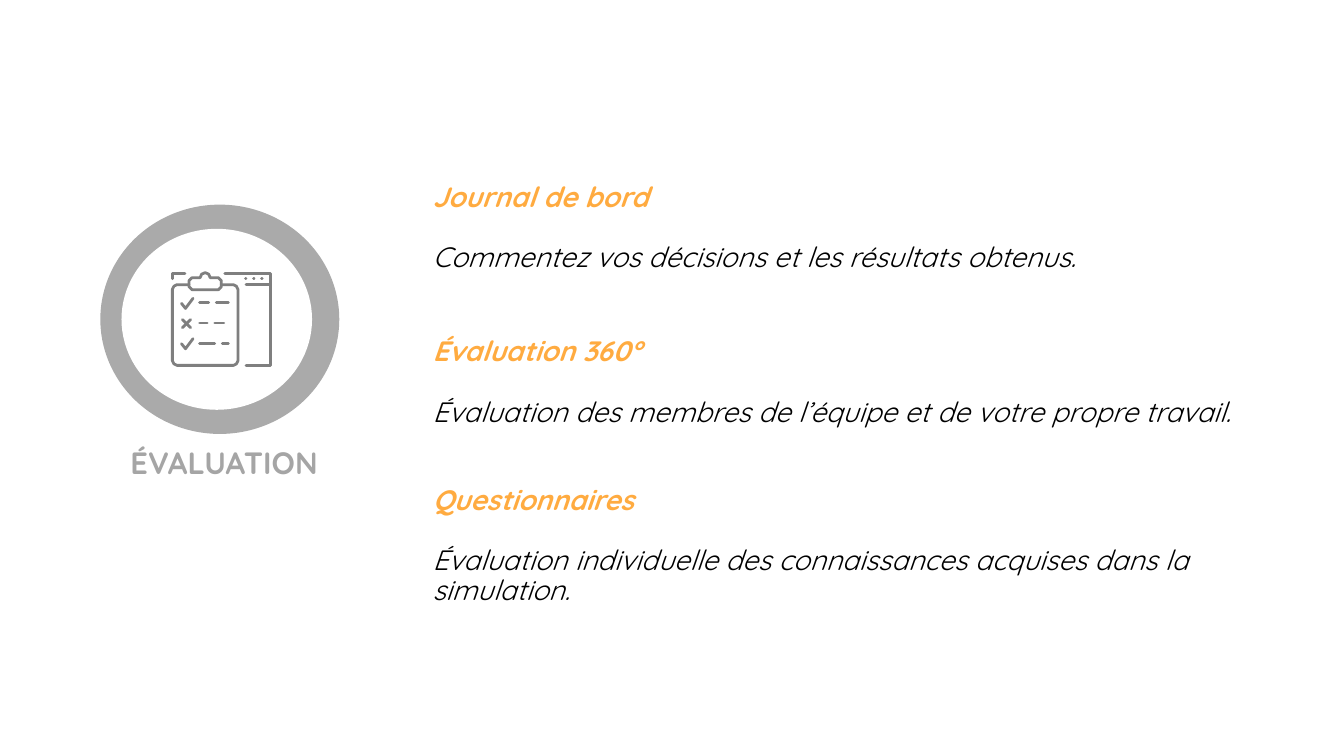
from dataclasses import dataclass

from pptx import Presentation
from pptx.dml.color import RGBColor as Color
from pptx.enum.shapes import MSO_SHAPE as Preset
from pptx.enum.text import MSO_ANCHOR as Anchor, PP_ALIGN as Align
from pptx.oxml.ns import qn
from pptx.oxml.xmlchemy import OxmlElement
from pptx.util import Pt

EMU_PER_PX = 9144


@dataclass(frozen=True)
class Theme:
    """Colours, font and type sizes of the slide."""
    font: str = "Quicksand"
    heading: Color = Color(0xFF, 0xAB, 0x40)
    body: Color = Color(0, 0, 0)
    ring: Color = Color(0xAA, 0xAA, 0xAA)
    label: Color = Color(0xA5, 0xA5, 0xA5)
    icon: Color = Color(0x7F, 0x7F, 0x7F)
    white: Color = Color(0xFF, 0xFF, 0xFF)
    text_size: Pt = Pt(40)
    label_size: Pt = Pt(44)
    body_gap: Pt = Pt(43.5)
    stroke: Pt = Pt(4)


THEME = Theme()

SECTIONS = [
    (339, 24, "Journal de bord", "Commentez vos décisions et les résultats obtenus."),
    (645, 24, "Évaluation 360°", "Évaluation des membres de l’équipe et de votre propre travail."),
    (964, 0, "Questionnaires",
     "Évaluation individuelle des connaissances acquises dans la simulation."),
]
WINDOW = [
    [(342, 553), (342, 542), (367, 542)],
    [(446, 542), (536, 542), (536, 725), (488, 725)],
    [(488, 565), (533, 565)],
]
WINDOW_DOTS = [[(left, 553), (left + 1, 553)] for left in (487, 503, 519)]
BOARD = [(375, 565), (351, 565), (345, 568), (342, 574), (342, 716), (345, 722), (351, 725),
         (463, 725), (469, 722), (472, 716), (472, 574), (469, 568), (463, 565), (439, 565)]
CLIP = [(381, 551), (397, 551), (400, 544), (407, 541), (414, 544), (417, 551), (433, 551),
        (439, 557), (439, 569), (433, 575), (381, 575), (375, 569), (375, 557), (381, 551)]
CHECKS = [[(360, y), (368, y + 10), (383, y - 10)] for y in (602, 682)]
CROSS = [[(362, 634), (378, 650)], [(362, 650), (378, 634)]]
DASH_ROWS = {
    601: [(396, 414), (429, 453)],
    641: [(396, 411), (426, 444)],
    682: [(396, 426), (441, 453)],
}
DASHES = [[(start, y), (end, y)] for y, row in DASH_ROWS.items() for start, end in row]


def px(*lengths):
    """Turn lengths in px into EMU."""
    return [length * EMU_PER_PX for length in lengths]


def add_text_box(slide, box, margins):
    """Add an empty wrapping text box and return its text frame."""
    frame = slide.shapes.add_textbox(*px(*box)).text_frame
    frame.word_wrap = True
    frame.vertical_anchor = Anchor.TOP
    side, top, bottom = px(*margins)
    frame.margin_left = frame.margin_right = side
    frame.margin_top, frame.margin_bottom = top, bottom
    return frame


def style_paragraph(paragraph, text, size, color, spacing, bold=False, italic=False):
    """Fill a paragraph and set its font and line spacing."""
    paragraph.text = text
    paragraph.line_spacing = spacing
    font = paragraph.font
    font.name, font.size, font.bold, font.italic = THEME.font, size, bold, italic
    font.color.rgb = color


def add_section(slide, top, margin_top, heading, body):
    """Add a heading with its description below."""
    frame = add_text_box(slide, (838, top, 1644, 329), (20, margin_top, 10))
    style_paragraph(frame.paragraphs[0], heading, THEME.text_size, THEME.heading, 0.9, True, True)
    paragraph = frame.add_paragraph()
    style_paragraph(paragraph, body, THEME.text_size, THEME.body, 0.9, italic=True)
    paragraph.space_before = THEME.body_gap


def add_label(slide, text):
    """Add the centred caption below the ring."""
    paragraph = add_text_box(slide, (199, 894, 491, 81), (27, 13, 13)).paragraphs[0]
    style_paragraph(paragraph, text, THEME.label_size, THEME.label, 0.6, True)
    paragraph.alignment = Align.CENTER


def add_oval(slide, box, color):
    """Add a filled ellipse without outline."""
    oval = slide.shapes.add_shape(Preset.OVAL, *px(*box))
    oval.shadow.inherit = False
    oval.fill.solid()
    oval.fill.fore_color.rgb = color
    oval.line.fill.background()


def add_line_icon(slide, strokes):
    """Draw all strokes as one outlined shape with round ends."""
    builder = slide.shapes.build_freeform(*strokes[0][0], scale=EMU_PER_PX)
    for start, *others in strokes:
        builder.move_to(*start)
        builder.add_line_segments(others, close=False)
    icon = builder.convert_to_shape()
    icon.shadow.inherit = False
    icon.fill.background()
    icon.line.color.rgb = THEME.icon
    icon.line.width = THEME.stroke
    line = icon._element.spPr.find(qn("a:ln"))
    line.set("cap", "rnd")
    line.append(OxmlElement("a:round"))


def main():
    """Build the evaluation slide and save it."""
    presentation = Presentation()
    presentation.slide_width, presentation.slide_height = px(2666, 1500)
    slide = presentation.slides.add_slide(presentation.slide_layouts[6])
    add_section(slide, *SECTIONS[0])
    add_section(slide, *SECTIONS[2])
    add_oval(slide, (199, 406, 474, 455), THEME.ring)
    add_label(slide, "ÉVALUATION")
    add_oval(slide, (241, 454, 378, 359), THEME.white)
    add_line_icon(slide, [*WINDOW, *WINDOW_DOTS, BOARD, CLIP, *CHECKS, *CROSS, *DASHES])
    add_section(slide, *SECTIONS[1])
    presentation.save("out.pptx")


if __name__ == "__main__":
    main()
